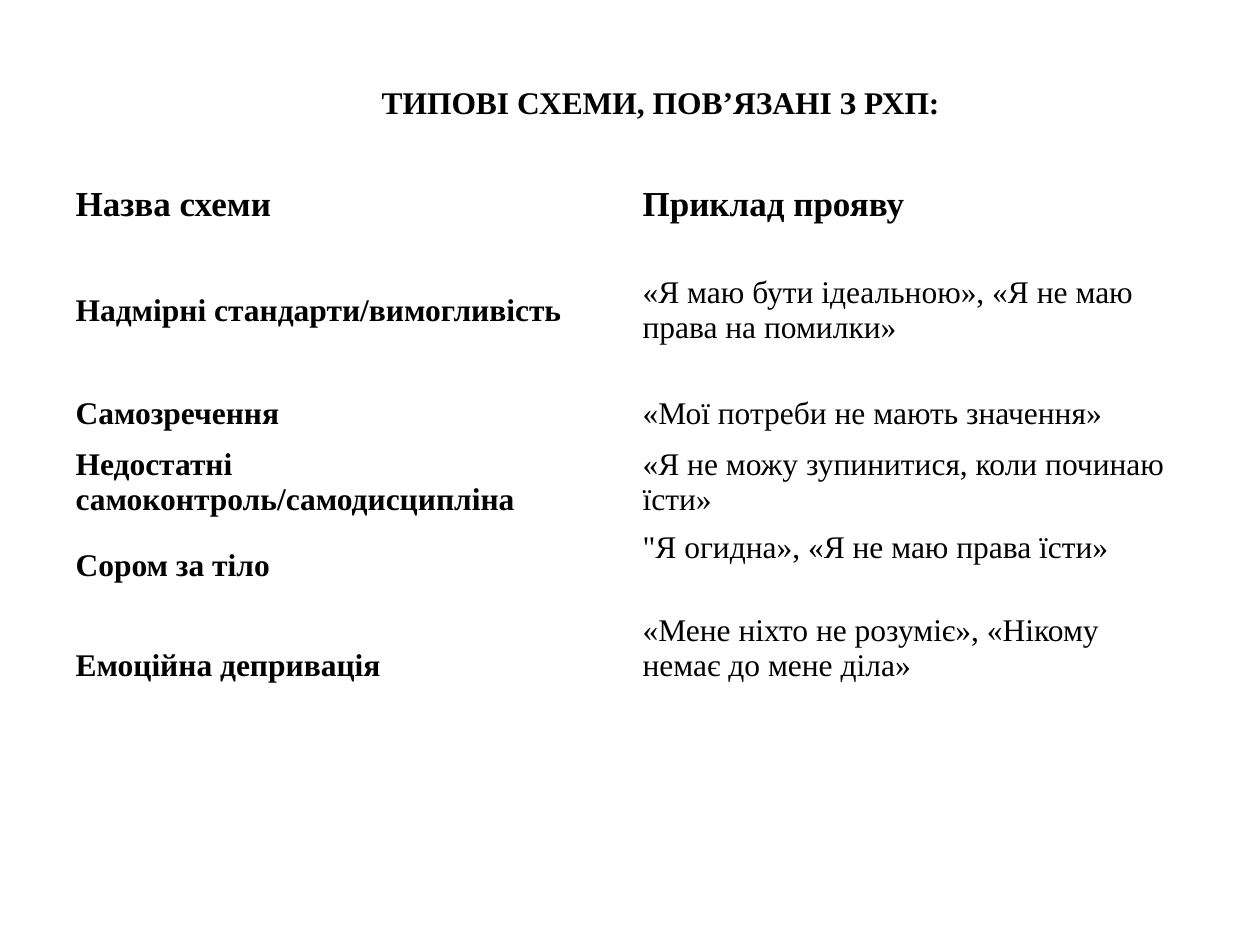
from pptx import Presentation
from pptx.dml.color import RGBColor as RGB
from pptx.enum.text import MSO_ANCHOR as Anchor, PP_ALIGN as Align
from pptx.util import Inches, Pt

BLACK = RGB(0, 0, 0)
FONT = "Times New Roman"

deck = Presentation()
deck.slide_width, deck.slide_height = Inches(10), Inches(7.5)
slide = deck.slides.add_slide(deck.slide_layouts[6])


def style(frame, size, bold):
    font = frame.paragraphs[0].runs[0].font
    font.name, font.size, font.bold = FONT, Pt(size), bold
    font.color.rgb = BLACK


rows = [
    ("Назва схеми", "Приклад прояву", 0.47),
    ("Надмірні стандарти/вимогливість",
     "«Я маю бути ідеальною», «Я не маю права на помилки»", 1.21),
    ("Самозречення", "«Мої потреби не мають значення»", 0.43),
    ("Недостатні самоконтроль/самодисципліна",
     "«Я не можу зупинитися, коли починаю їсти»", 0.66),
    ("Сором за тіло", "\"Я огидна», «Я не маю права їсти»", 0.65),
    ("Емоційна депривація",
     "«Мене ніхто не розуміє», «Нікому немає до мене діла»", 0.88),
]
high = sum(row[2] for row in rows)
table = slide.shapes.add_table(
    len(rows), 2, Inches(0.5), Inches(1.39), Inches(9), Inches(high)).table
table.first_row = table.horz_banding = False

for r, (name, quote, tall) in enumerate(rows):
    table.rows[r].height = Inches(tall)
    for c, text in enumerate((name, quote)):
        cell = table.cell(r, c)
        cell.fill.background()
        cell.vertical_anchor = Anchor.MIDDLE
        cell.text_frame.text = text
        style(cell.text_frame, 20 if r == 0 else 18, r == 0 or c == 0)

table.cell(4, 1).margin_bottom = Inches(0.33)
table.cell(5, 1).margin_bottom = Inches(0.27)
table.cell(5, 0).margin_top = Inches(0.11)

title = slide.shapes.add_textbox(
    Inches(0.03), Inches(0.58), Inches(7.58), Inches(0.71)).text_frame
title.word_wrap = True
title.margin_top, title.margin_right = Inches(0.08), Inches(0.15)
title.text = "ТИПОВІ СХЕМИ, ПОВ’ЯЗАНІ З РХП:"
title.paragraphs[0].alignment = Align.RIGHT
style(title, 18, True)

deck.save("out.pptx")
